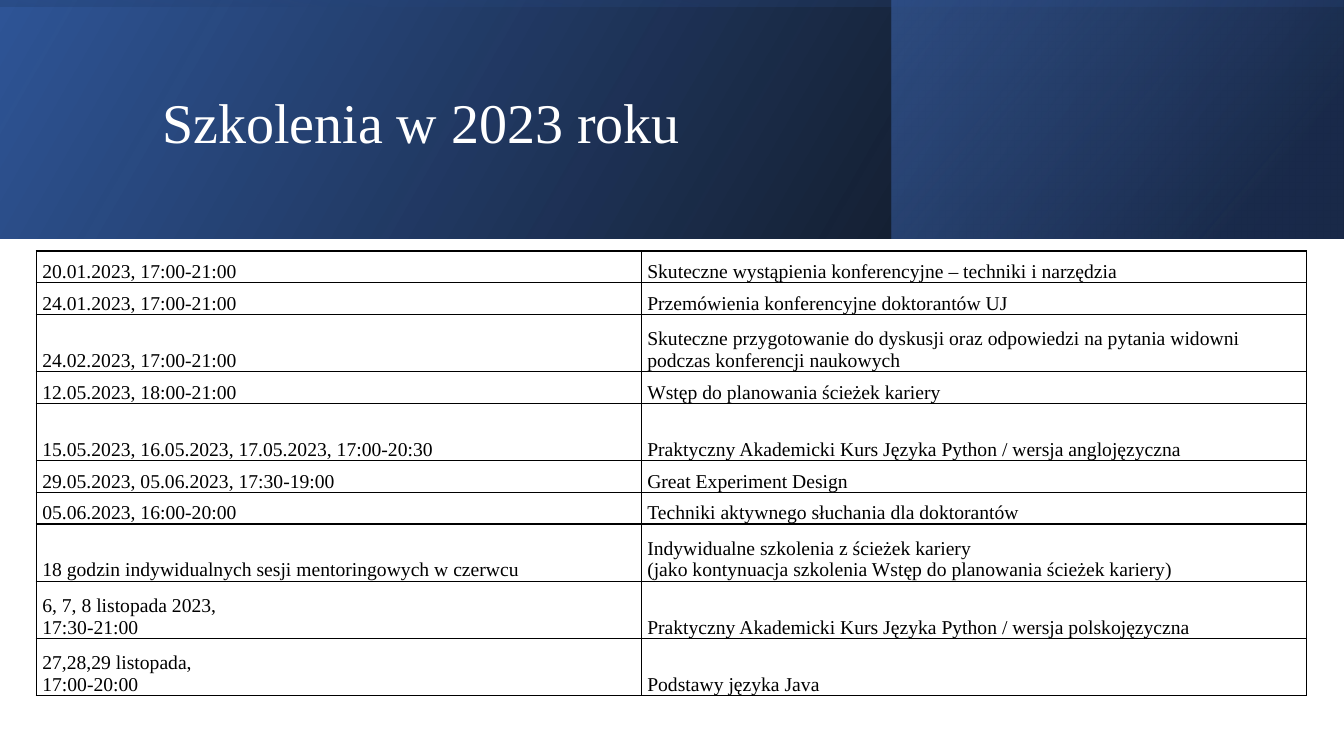
"""Build the slide listing the 2023 training sessions."""
from lxml.etree import SubElement
from pptx import Presentation
from pptx.dml.color import RGBColor
from pptx.enum.shapes import MSO_SHAPE
from pptx.enum.text import MSO_ANCHOR, MSO_AUTO_SIZE, PP_ALIGN
from pptx.oxml.ns import qn
from pptx.util import Inches, Pt

WIDTH, HEIGHT = 13.33, 7.5
BANNER = 2.37
FONT = "Times New Roman"
ROW, TALL = 0.315, 1.8
COLUMNS = (6, 6.6)
COLORS = {
    "black": "000000",
    "white": "FFFFFF",
    "blue": "2F5597",
    "navy": "203864",
    "sky": "4472C4",
}
TRAININGS = [
    (1, "20.01.2023, 17:00-21:00", "Skuteczne wystąpienia konferencyjne – techniki i narzędzia"),
    (1, "24.01.2023, 17:00-21:00", "Przemówienia konferencyjne doktorantów UJ"),
    (TALL, "24.02.2023, 17:00-21:00",
     "Skuteczne przygotowanie do dyskusji oraz odpowiedzi na pytania widowni\n"
     "podczas konferencji naukowych"),
    (1, "12.05.2023, 18:00-21:00", "Wstęp do planowania ścieżek kariery"),
    (TALL, "15.05.2023, 16.05.2023, 17.05.2023, 17:00-20:30",
     "Praktyczny Akademicki Kurs Języka Python / wersja anglojęzyczna"),
    (1, "29.05.2023, 05.06.2023, 17:30-19:00", "Great Experiment Design"),
    (1, "05.06.2023, 16:00-20:00", "Techniki aktywnego słuchania dla doktorantów"),
    (TALL, "18 godzin indywidualnych sesji mentoringowych w czerwcu",
     "Indywidualne szkolenia z ścieżek kariery\n"
     "(jako kontynuacja szkolenia Wstęp do planowania ścieżek kariery)"),
    (TALL, "6, 7, 8 listopada 2023,\n17:30-21:00",
     "Praktyczny Akademicki Kurs Języka Python / wersja polskojęzyczna"),
    (TALL, "27,28,29 listopada,\n17:00-20:00", "Podstawy języka Java"),
]


def add_run(paragraph, text, size, color):
    """Append one formatted run to a paragraph."""
    run = paragraph.add_run()
    run.text = text
    run.font.name = FONT
    run.font.size = Pt(size)
    run.font.color.rgb = RGBColor.from_string(COLORS[color])


def add_gradient(slide, box, angle, stops, rotation=0):
    """Add a mirrored rectangle with a translucent gradient of (position, color, opacity) stops."""
    shape = slide.shapes.add_shape(MSO_SHAPE.RECTANGLE, *map(Inches, box))
    shape.shadow.inherit = False
    shape.line.fill.background()
    shape.rotation = rotation
    shape.element.spPr.find(qn("a:xfrm")).set("flipH", "1")
    shape.fill.gradient()
    shape.fill.gradient_angle = 360 - angle
    for stop, (position, color, _) in zip(shape.fill.gradient_stops, stops):
        stop.position = position / 100
        stop.color.rgb = RGBColor.from_string(COLORS[color])
    for color, (_, _, opacity) in zip(shape.element.spPr.iter(qn("a:srgbClr")), stops):
        SubElement(color, qn("a:alpha")).set("val", str(opacity * 1000))


def add_banner(slide):
    """Layer the three gradients across the top of the slide."""
    add_gradient(slide, (0, 0, WIDTH, BANNER), 330, [(0, "black", 96), (100, "blue", 100)])
    add_gradient(slide, (8.84, 0, 4.48, BANNER), 320, [(19, "navy", 68), (100, "sky", 48)])
    offset = (WIDTH - BANNER) / 2
    add_gradient(slide, (offset, -offset, BANNER, WIDTH), 350,
                 [(23, "blue", 16), (99, "black", 45)], rotation=270)


def place_title(slide, text):
    """Format the title placeholder and bring it in front of the banner."""
    title = slide.shapes.title
    title.left, title.top, title.width, title.height = map(Inches, (1.51, 0.38, 10.63, 1.72))
    title.element.getparent().append(title.element)
    frame = title.text_frame
    frame.auto_size = MSO_AUTO_SIZE.NONE
    frame.vertical_anchor = MSO_ANCHOR.MIDDLE
    paragraph = frame.paragraphs[0]
    paragraph.alignment = PP_ALIGN.LEFT
    paragraph.line_spacing = 0.9
    add_run(paragraph, text, 40, "white")


def add_borders(cell):
    """Draw a thin black line on every side of a cell."""
    properties = cell._tc.get_or_add_tcPr()
    for side in ("lnL", "lnR", "lnT", "lnB"):
        line = SubElement(properties, qn(f"a:{side}"), w=str(Pt(1)))
        fill = SubElement(line, qn("a:solidFill"))
        SubElement(fill, qn("a:srgbClr"), val=COLORS["black"])


def fill_cell(cell, text):
    """Write bottom-aligned text in a bordered, unfilled cell, one paragraph a line."""
    cell.margin_left = cell.margin_right = Inches(0.06)
    cell.margin_top, cell.margin_bottom = Inches(0.01), 0
    cell.vertical_anchor = MSO_ANCHOR.BOTTOM
    add_borders(cell)
    cell.fill.background()
    frame = cell.text_frame
    for index, line in enumerate(text.split("\n")):
        paragraph = frame.add_paragraph() if index else frame.paragraphs[0]
        add_run(paragraph, line, 14, "black")


def add_schedule(slide):
    """Add the table of dates and training titles."""
    height = ROW * sum(units for units, *_ in TRAININGS)
    table = slide.shapes.add_table(
        len(TRAININGS), len(COLUMNS),
        *map(Inches, (0.36, 2.49, sum(COLUMNS), height))).table
    table.first_row = table.horz_banding = False
    for column, width in zip(table.columns, COLUMNS):
        column.width = Inches(width)
    for row, (units, *texts) in zip(table.rows, TRAININGS):
        row.height = Inches(ROW * units)
        for cell, text in zip(row.cells, texts):
            fill_cell(cell, text)


def main():
    """Build and save the presentation."""
    presentation = Presentation()
    presentation.slide_width, presentation.slide_height = Inches(WIDTH), Inches(HEIGHT)
    slide = presentation.slides.add_slide(presentation.slide_layouts[5])
    add_banner(slide)
    place_title(slide, "Szkolenia w 2023 roku")
    add_schedule(slide)
    presentation.save("out.pptx")


if __name__ == "__main__":
    main()
